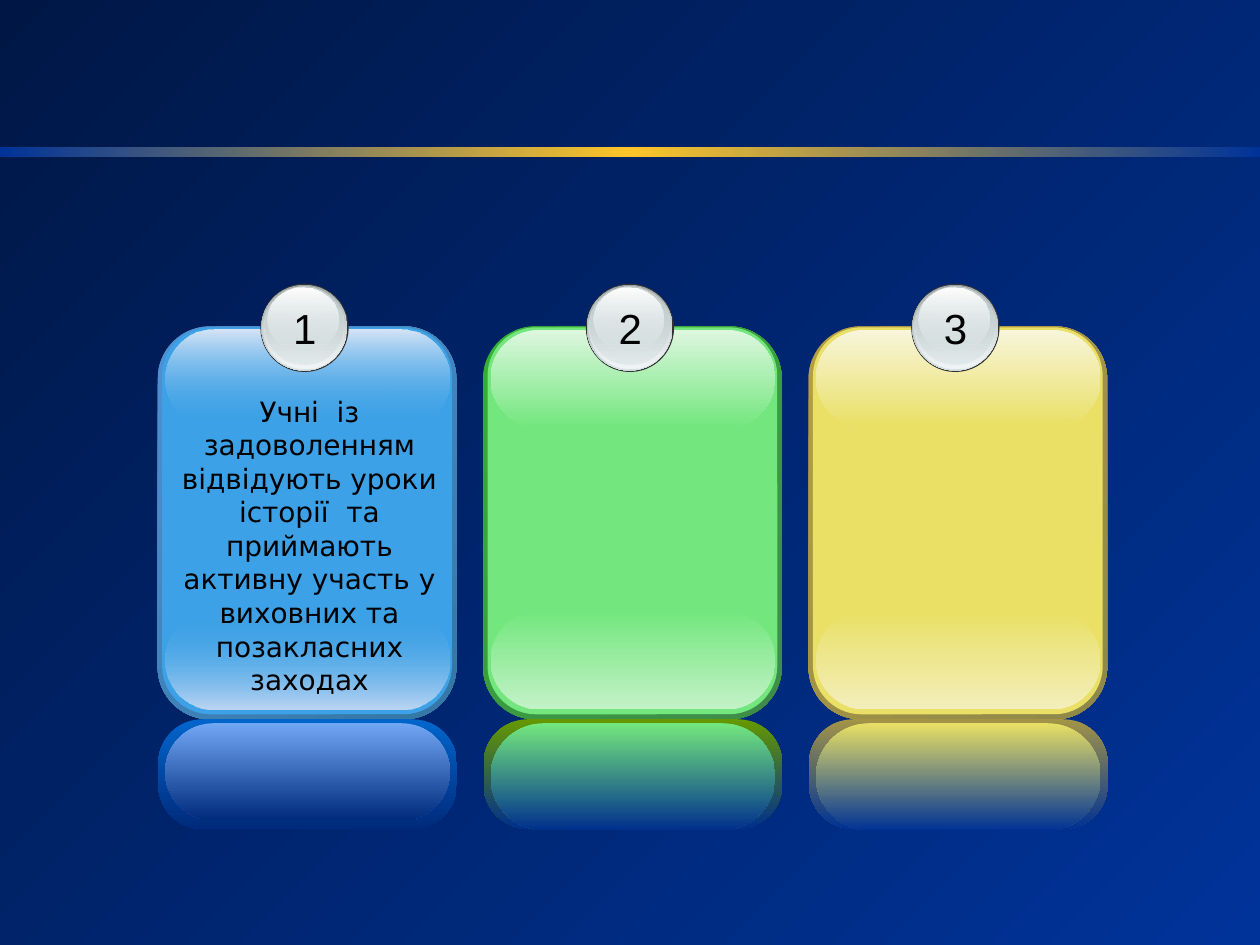
from lxml.etree import SubElement
from pptx import Presentation
from pptx.dml.color import RGBColor
from pptx.enum.shapes import MSO_SHAPE as Preset
from pptx.enum.text import MSO_AUTO_SIZE as AutoSize, PP_ALIGN as Align
from pptx.oxml.ns import qn
from pptx.util import Cm, Pt

FIRST_LEFT, PITCH = 3.18, 6.56
GLOSS_WIDTH = 5.74

# Frame gradient, face, lower gloss, upper gloss, reflection, inner reflection
# and its height; a gradient stop is a colour or (colour, opacity in percent)
CARDS = [
    dict(number="1",
         text="Учні  із задоволенням відвідують уроки історії  та приймають "
              "активну участь у виховних та позакласних заходах",
         frame=("4E91D4", "3477A4"), face="3CA1E6",
         lower=(("3CA1E6", 0), "BDD6F3"), upper=("D7E5F7", ("3CA1E6", 0)),
         mirror=("0066CC", "002A7C"), inner=("72A7F6", "002A7C"), depth=1.96),
    dict(number="2", text="",
         frame=("34B034", "3F8B4A"), face="73E77E",
         lower=("73E77E", "C3F2C7"), upper=("DDF7DF", "73E77E"),
         mirror=("669900", "002F8D"), inner=("73E77E", "002F8D"), depth=2.16),
    dict(number="3", text="",
         frame=("B59F43", "8F8849"), face="E9E065",
         lower=("E9E065", "F3EEBB"), upper=("F8F5DB", "E9E065"),
         mirror=("A39446", "003295"), inner=("E9E065", "003295"), depth=2.16),
]

# Badge discs: offset from badge left, top, width, height, fill
BADGE_DISCS = [
    (0, 5.72, 1.78, 1.78, "333333"),
    (0.02, 5.74, 1.73, 1.73, ("99A1A2", "D6E1E2")),
    (0.05, 5.74, 1.68, 1.68, (("D6E1E2", 0), "F2F5F5")),
    (0.08, 5.77, 1.6, 1.57, ("C1CBCC", ("D6E1E2", 48))),
    (0.15, 5.79, 1.42, 1.27, ("FFFFFF", ("D6E1E2", 38))),
]


def color(code):
    return RGBColor.from_string(code)


def paint(fill, element, paint_spec, angle=90):
    """Fill with one colour, or with evenly spaced stops at a clockwise angle."""
    if isinstance(paint_spec, str):
        fill.solid()
        fill.fore_color.rgb = color(paint_spec)
        return
    fill.gradient()
    fill.gradient_angle = (360 - angle) % 360
    stops = element.find(".//" + qn("a:gsLst"))
    for old_stop in list(stops):
        stops.remove(old_stop)
    for index, stop in enumerate(paint_spec):
        code, opacity = (stop, 100) if isinstance(stop, str) else stop
        position = 100000 * index // (len(paint_spec) - 1)
        mark = SubElement(stops, qn("a:gs"), pos=str(position))
        tint = SubElement(mark, qn("a:srgbClr"), val=code)
        if opacity < 100:
            SubElement(tint, qn("a:alpha"), val=str(opacity * 1000))


def add_panel(shapes, preset, box, fill, angle=90, rounding=None):
    panel = shapes.add_shape(preset, *map(Cm, box))
    panel.shadow.inherit = False
    panel.line.fill.background()
    if rounding is not None:
        panel.adjustments[0] = rounding
    paint(panel.fill, panel.element, fill, angle)


def add_text(shapes, box, text, size=16, font="DejaVu Sans", code="000000", wrap=True):
    label = shapes.add_textbox(*map(Cm, box))
    frame = label.text_frame
    frame.word_wrap = wrap
    frame.auto_size = AutoSize.SHAPE_TO_FIT_TEXT
    paragraph = frame.paragraphs[0]
    paragraph.alignment = Align.CENTER
    run = paragraph.add_run()
    run.text = text
    run.font.size = Pt(size)
    run.font.name = font
    run.font.color.rgb = color(code)


def add_badge(shapes, left, number):
    discs = shapes.add_group_shape().shapes
    for offset, top, width, height, fill in BADGE_DISCS:
        add_panel(discs, Preset.OVAL, (left + offset, top, width, height), fill)
    add_text(shapes, (left + 0.4, 5.97, 0.99, 1.27), number,
             size=24, font="Arial", wrap=False)


def add_card(shapes, left, card):
    gloss_left = left + 0.15
    layers = [
        ((left, 6.58, 6.02, 7.92), card["frame"], 45, 0.175),
        ((left + 0.09, 6.6, 5.84, 7.8), card["face"], 90, 0.167),
        ((gloss_left, 12.32, GLOSS_WIDTH, 1.98), card["lower"], 90, 0.5),
        ((gloss_left, 6.65, GLOSS_WIDTH, 1.96), card["upper"], 90, 0.5),
        # Reflection under the card
        ((left + 0.01, 14.5, 6.02, 2.21), card["mirror"], 90, 0.404),
        ((gloss_left, 14.58, GLOSS_WIDTH, card["depth"]), card["inner"], 90, 0.5),
    ]
    for box, fill, angle, rounding in layers:
        add_panel(shapes, Preset.ROUNDED_RECTANGLE, box, fill, angle, rounding)
    add_badge(shapes, left + 2.07, card["number"])
    if card["text"]:
        add_text(shapes, (left + 0.2, 7.82, 5.72, 6.4), card["text"])


def main():
    deck = Presentation()
    deck.slide_width, deck.slide_height = Cm(25.4), Cm(19.05)
    slide = deck.slides.add_slide(deck.slide_layouts[6])

    # Background and golden divider
    paint(slide.background.fill, slide.element, ("001746", "003399"), angle=45)
    add_panel(slide.shapes, Preset.RECTANGLE, (0, 2.97, 25.4, 0.2),
              ("003399", "FDC529", "003399"), angle=0)

    # Numbered cards
    for index, card in enumerate(CARDS):
        add_card(slide.shapes, FIRST_LEFT + index * PITCH, card)

    deck.save("out.pptx")


if __name__ == "__main__":
    main()
